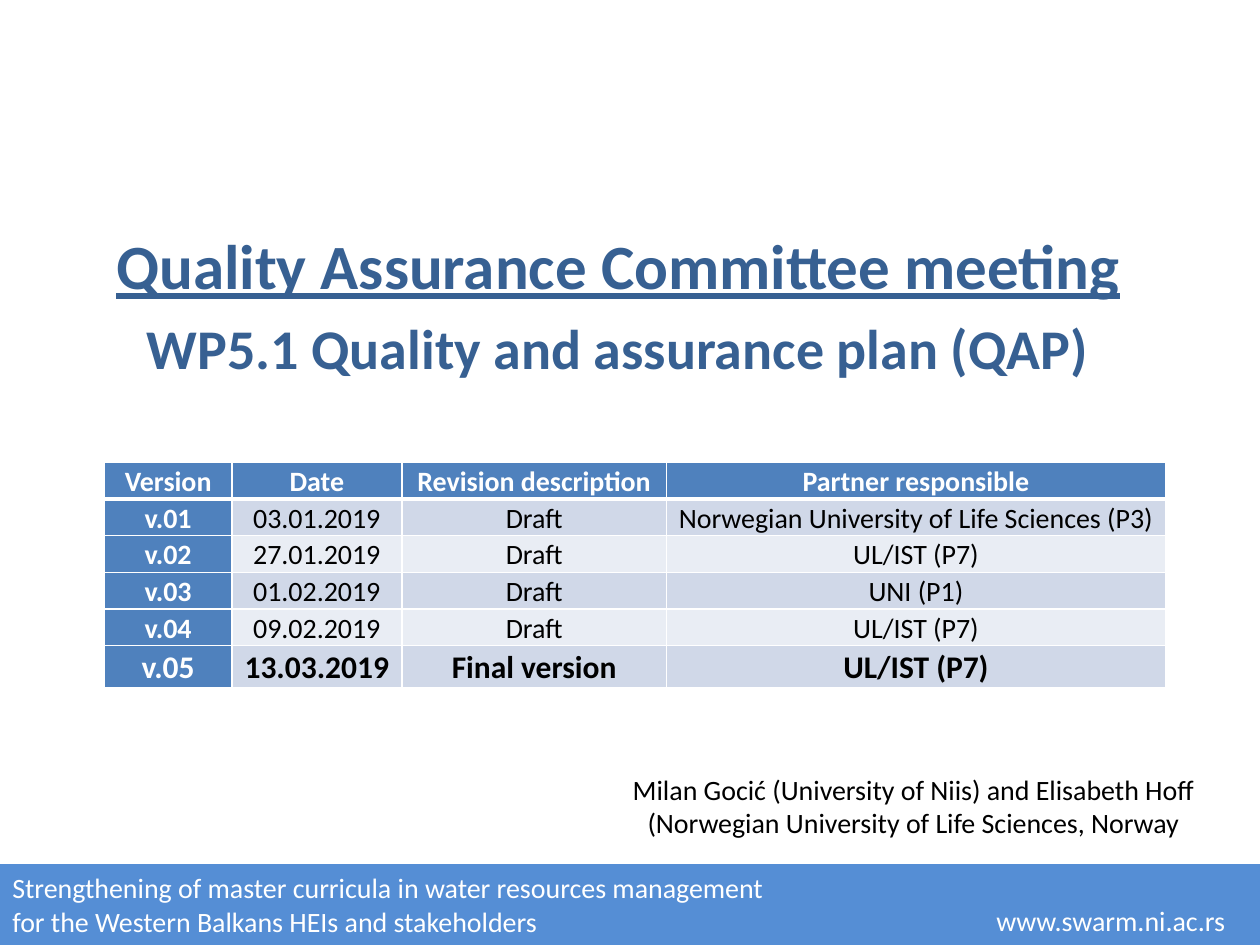
from dataclasses import dataclass
from typing import Optional

from pptx import Presentation, util as u
from pptx.dml.color import RGBColor
from pptx.enum import shapes, text
from pptx.oxml.ns import qn
from lxml import etree


@dataclass(frozen=True)
class Theme:
    font: str = "Calibri"
    white: str = "FFFFFF"
    black: str = "000000"
    heading: str = "376092"
    footer: str = "558ED5"
    header: str = "4F81BD"
    bands: tuple = ("D0D8E8", "E9EDF4")
    title_size: int = 36
    subtitle_size: int = 32
    body_size: int = 16
    final_size: int = 18


@dataclass(frozen=True)
class Label:
    lines: tuple
    left: float
    top: float
    width: float
    height: float
    color: str
    align: Optional[text.PP_ALIGN] = None
    wrap: bool = True


@dataclass(frozen=True)
class Revision:
    version: str
    date: str
    description: str
    partner: str
    final: bool = False


THEME = Theme()
LABELS = (
    Label(("Strengthening of master curricula in water resources management",
           "for the Western Balkans HEIs and stakeholders"),
          0, 6.86, 6.66, 0.64, THEME.white),
    Label(("www.swarm.ni.ac.rs",), 7.81, 7.12, 2.1, 0.37, THEME.white, wrap=False),
    Label(("Milan Gocić (University of Niis) and Elisabeth Hoff "
           "(Norwegian University of Life Sciences, Norway",),
          4.5, 6.08, 5.5, 0.64, THEME.black, text.PP_ALIGN.CENTER),
)
HEADINGS = ("Version", "Date", "Revision description", "Partner responsible")
REVISIONS = (
    Revision("v.01", "03.01.2019", "Draft", "Norwegian University of Life Sciences (P3)"),
    Revision("v.02", "27.01.2019", "Draft", "UL/IST (P7)"),
    Revision("v.03", "01.02.2019", "Draft", "UNI (P1)"),
    Revision("v.04", "09.02.2019", "Draft", "UL/IST (P7)"),
    Revision("v.05", "13.03.2019", "Final version", "UL/IST (P7)", final=True),
)
COLUMN_WIDTHS = (1.01, 1.35, 2.1, 3.96)


def style_para(para, size: int, color: str, bold: bool = False,
               align: Optional[text.PP_ALIGN] = None) -> None:
    para.alignment = align
    for span in para.runs:
        span.font.name = THEME.font
        span.font.size = u.Pt(size)
        span.font.bold = bold
        span.font.color.rgb = RGBColor.from_string(color)


def add_footer_band(page) -> None:
    band = page.shapes.add_shape(shapes.MSO_SHAPE.FLOWCHART_PROCESS,
                                 0, u.Inches(6.86), u.Inches(10), u.Inches(0.64))
    band.shadow.inherit = False
    band.fill.solid()
    band.fill.fore_color.rgb = RGBColor.from_string(THEME.footer)
    band.line.fill.background()


def add_label(page, label: Label) -> None:
    box = page.shapes.add_textbox(u.Inches(label.left), u.Inches(label.top),
                                  u.Inches(label.width), u.Inches(label.height))
    frame = box.text_frame
    frame.word_wrap = label.wrap
    frame.text = "\n".join(label.lines)
    for para in frame.paragraphs:
        style_para(para, THEME.body_size, label.color, align=label.align)


def fill_title(page) -> None:
    title = page.shapes.title
    title.left, title.top = u.Inches(0.23), u.Inches(1.75)
    title.width, title.height = u.Inches(9.35), u.Inches(1.25)
    frame = title.text_frame
    frame.auto_size = text.MSO_AUTO_SIZE.NONE
    frame.vertical_anchor = text.MSO_ANCHOR.TOP
    frame.text = "Quality Assurance Committee meeting\nWP5.1 Quality and assurance plan (QAP)"
    heading, subject = frame.paragraphs
    style_para(heading, THEME.title_size, THEME.heading, True, text.PP_ALIGN.CENTER)
    style_para(subject, THEME.subtitle_size, THEME.heading, True, text.PP_ALIGN.CENTER)
    heading.runs[0].font.underline = True
    subject.space_before = u.Pt(6.4)


def set_borders(cell, bottom: float) -> None:
    """Draw white borders, which the schema places ahead of the cell fill."""
    properties = cell._tc.get_or_add_tcPr()
    widths = (("a:lnL", 1), ("a:lnR", 1), ("a:lnT", 1), ("a:lnB", bottom))
    for position, (tag, width) in enumerate(widths):
        line = etree.Element(qn(tag), w=str(u.Pt(width)))
        fill = etree.SubElement(line, qn("a:solidFill"))
        etree.SubElement(fill, qn("a:srgbClr"), val=THEME.white)
        properties.insert(position, line)


def fill_cell(cell, words: str, fill: str, size: int, color: str,
              bold: bool, bottom: float) -> None:
    cell.margin_left = cell.margin_right = u.Inches(0.07)
    cell.margin_top = cell.margin_bottom = 0
    cell.fill.solid()
    cell.fill.fore_color.rgb = RGBColor.from_string(fill)
    set_borders(cell, bottom)
    cell.text = words
    para = cell.text_frame.paragraphs[0]
    para.line_spacing = 1.07
    style_para(para, size, color, bold, text.PP_ALIGN.CENTER)


def add_revision_table(page) -> None:
    frame = page.shapes.add_table(len(REVISIONS) + 1, len(HEADINGS), u.Inches(0.83),
                                  u.Inches(3.67), u.Inches(8.42), u.Inches(1.75))
    table = frame.table
    for column, width in zip(table.columns, COLUMN_WIDTHS):
        column.width = u.Inches(width)
    # Heading row
    table.rows[0].height = u.Inches(0.28)
    for index, words in enumerate(HEADINGS):
        fill_cell(table.cell(0, index), words, THEME.header, THEME.body_size,
                  THEME.white, True, 3)
    # Banded revisions with a coloured version column
    for row, item in enumerate(REVISIONS, start=1):
        table.rows[row].height = u.Inches(0.33 if item.final else 0.28)
        size = THEME.final_size if item.final else THEME.body_size
        band = THEME.bands[(row - 1) % 2]
        fill_cell(table.cell(row, 0), item.version, THEME.header, size,
                  THEME.white, True, 1)
        for index, words in enumerate((item.date, item.description, item.partner), start=1):
            fill_cell(table.cell(row, index), words, band, size,
                      THEME.black, item.final, 1)


def main() -> None:
    deck = Presentation()
    deck.slide_width, deck.slide_height = u.Inches(10), u.Inches(7.5)
    page = deck.slides.add_slide(deck.slide_layouts.get_by_name("Title Only"))
    add_footer_band(page)
    fill_title(page)
    add_revision_table(page)
    for label in LABELS:
        add_label(page, label)
    deck.save("out.pptx")


if __name__ == "__main__":
    main()
